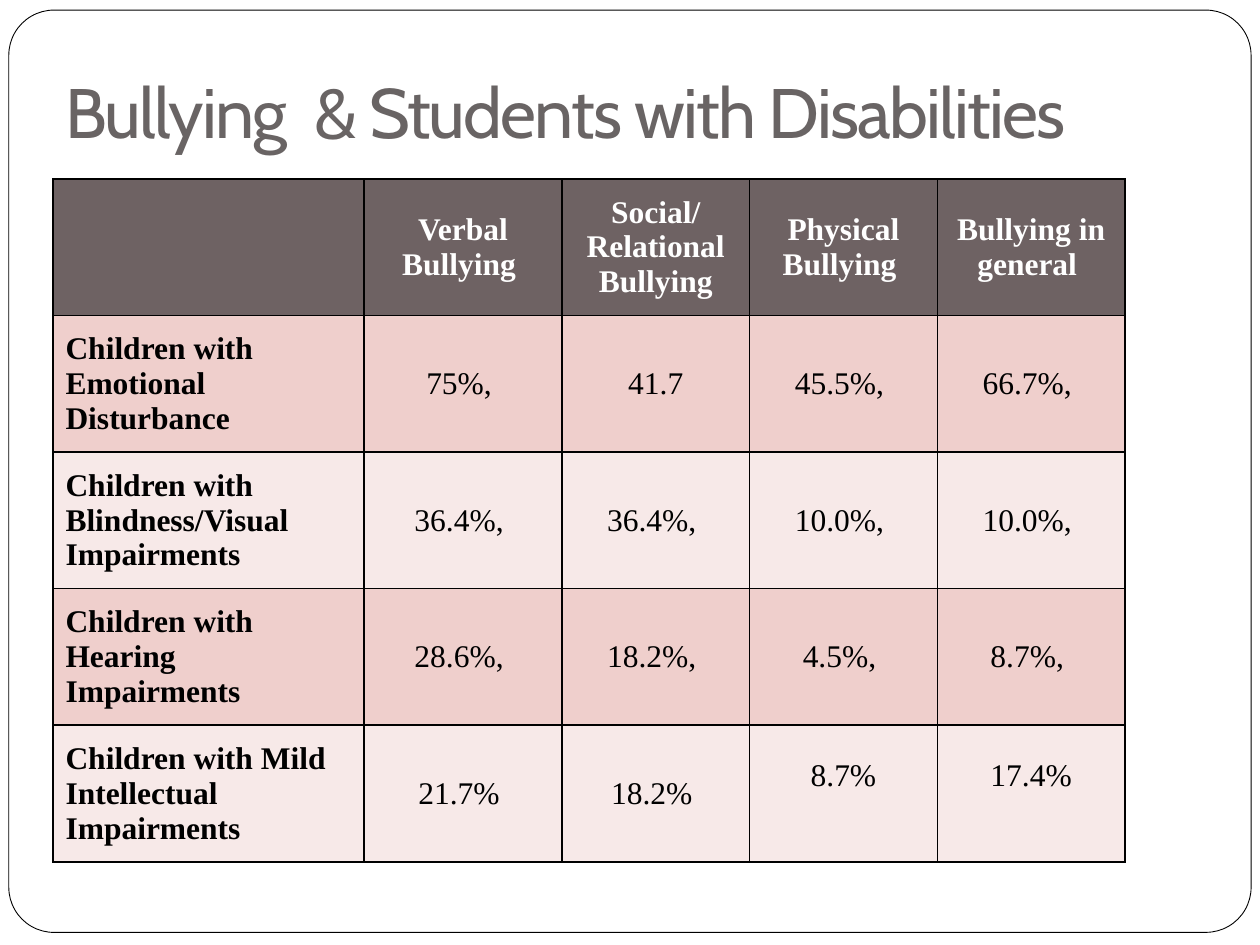
from lxml import etree
from pptx import Presentation
from pptx import util as u
from pptx.dml.color import RGBColor
from pptx.enum import shapes, text
from pptx.oxml.ns import qn

TITLE = "Bullying  & Students with Disabilities"
ROWS = [
    ["", "Verbal Bullying ", "Social/ Relational Bullying", "Physical Bullying ", "Bullying in general "],
    ["Children with Emotional Disturbance", "75%, ", "41.7", "45.5%, ", "66.7%, "],
    ["Children with Blindness/Visual Impairments", "36.4%, ", "36.4%, ", "10.0%, ", "10.0%, "],
    ["Children with Hearing Impairments", "28.6%, ", "18.2%, ", "4.5%, ", "8.7%, "],
    ["Children with Mild Intellectual Impairments", "21.7% ", "18.2% ", "8.7%", "17.4%"],
]
RAISED_CELLS = {(4, 3), (4, 4)}
COLUMN_WIDTHS = [2.47, 1.57, 1.49, 1.49, 1.49]
TABLE_LEFT, TABLE_TOP, TABLE_HEIGHT = 0.42, 1.42, 5.42
COLORS = {
    "white": "FFFFFF",
    "black": "000000",
    "title": "696464",
    "header": "6E6263",
    "odd": "EFCFCC",
    "even": "F7E9E8",
}


def color(name):
    return RGBColor.from_string(COLORS[name])


def style_font(font, name, size, tint, bold=False):
    font.name = name
    font.size = u.Pt(size)
    font.color.rgb = color(tint)
    font.bold = bold


def add_borders(cell):
    properties = cell._tc.get_or_add_tcPr()
    for index, side in enumerate(("lnL", "lnR", "lnT", "lnB")):
        line = etree.Element(qn(f"a:{side}"), w=str(u.Pt(1)))
        fill = etree.SubElement(line, qn("a:solidFill"))
        etree.SubElement(fill, qn("a:srgbClr"), val=COLORS["black"])
        properties.insert(index, line)


def add_frame(page):
    frame = page.shapes.add_shape(
        shapes.MSO_SHAPE.ROUNDED_RECTANGLE,
        u.Inches(0.07), u.Inches(0.08), u.Inches(9.86), u.Inches(7.32),
    )
    frame.adjustments[0] = 0.049
    frame.shadow.inherit = False
    frame.fill.solid()
    frame.fill.fore_color.rgb = color("white")
    frame.line.color.rgb = color("black")
    frame.line.width = u.Pt(0.5)


def add_title(page):
    box = page.shapes.add_textbox(u.Inches(0.42), u.Inches(0.25), u.Inches(8.75), u.Inches(1.25))
    box.text_frame.word_wrap = True
    box.text_frame.vertical_anchor = text.MSO_ANCHOR.MIDDLE
    paragraph = box.text_frame.paragraphs[0]
    style_font(paragraph.font, "Cabin", 40, "title")
    span = paragraph.add_run()
    span.text = TITLE
    span._r.get_or_add_rPr().set("spc", "-100")


def add_bullying_table(page):
    table = page.shapes.add_table(
        len(ROWS), len(COLUMN_WIDTHS), u.Inches(TABLE_LEFT), u.Inches(TABLE_TOP),
        u.Inches(sum(COLUMN_WIDTHS)), u.Inches(TABLE_HEIGHT),
    ).table
    for column, width in zip(table.columns, COLUMN_WIDTHS):
        column.width = u.Inches(width)
    for r, values in enumerate(ROWS):
        fill = "header" if r == 0 else "odd" if r % 2 else "even"
        for c, value in enumerate(values):
            cell = table.cell(r, c)
            cell.text = value
            cell.vertical_anchor = text.MSO_ANCHOR.MIDDLE
            if (r, c) in RAISED_CELLS:
                cell.margin_bottom = u.Inches(0.33)
            cell.fill.solid()
            cell.fill.fore_color.rgb = color(fill)
            add_borders(cell)
            paragraph = cell.text_frame.paragraphs[0]
            paragraph.alignment = text.PP_ALIGN.CENTER if c else text.PP_ALIGN.LEFT
            style_font(paragraph.font, "Times New Roman", 18,
                       "black" if r else "white", bold=r == 0 or c == 0)


def main():
    deck = Presentation()
    deck.slide_width, deck.slide_height = u.Inches(10), u.Inches(7.5)
    page = deck.slides.add_slide(deck.slide_layouts[6])
    add_frame(page)
    add_title(page)
    add_bullying_table(page)
    deck.save("out.pptx")


if __name__ == "__main__":
    main()
